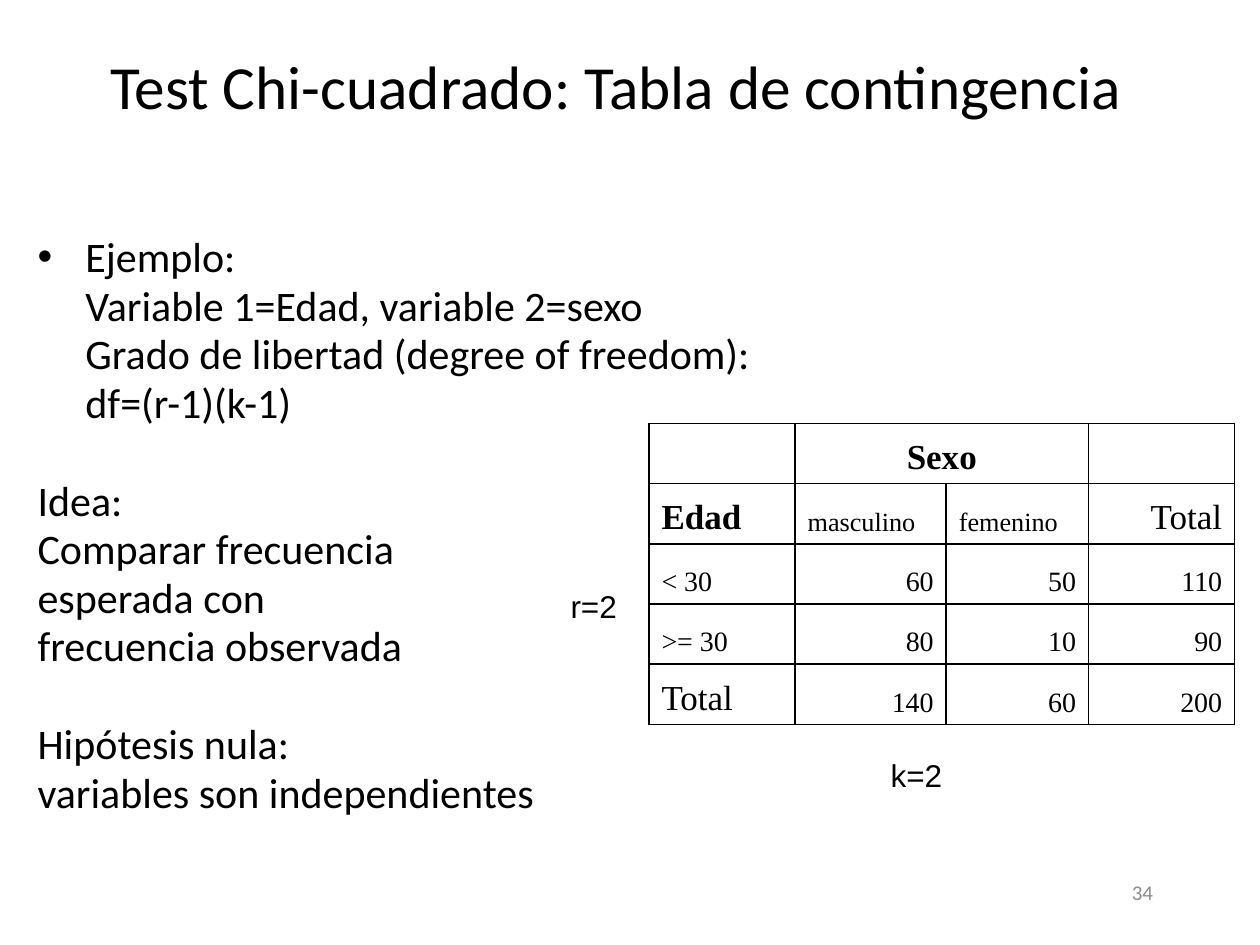
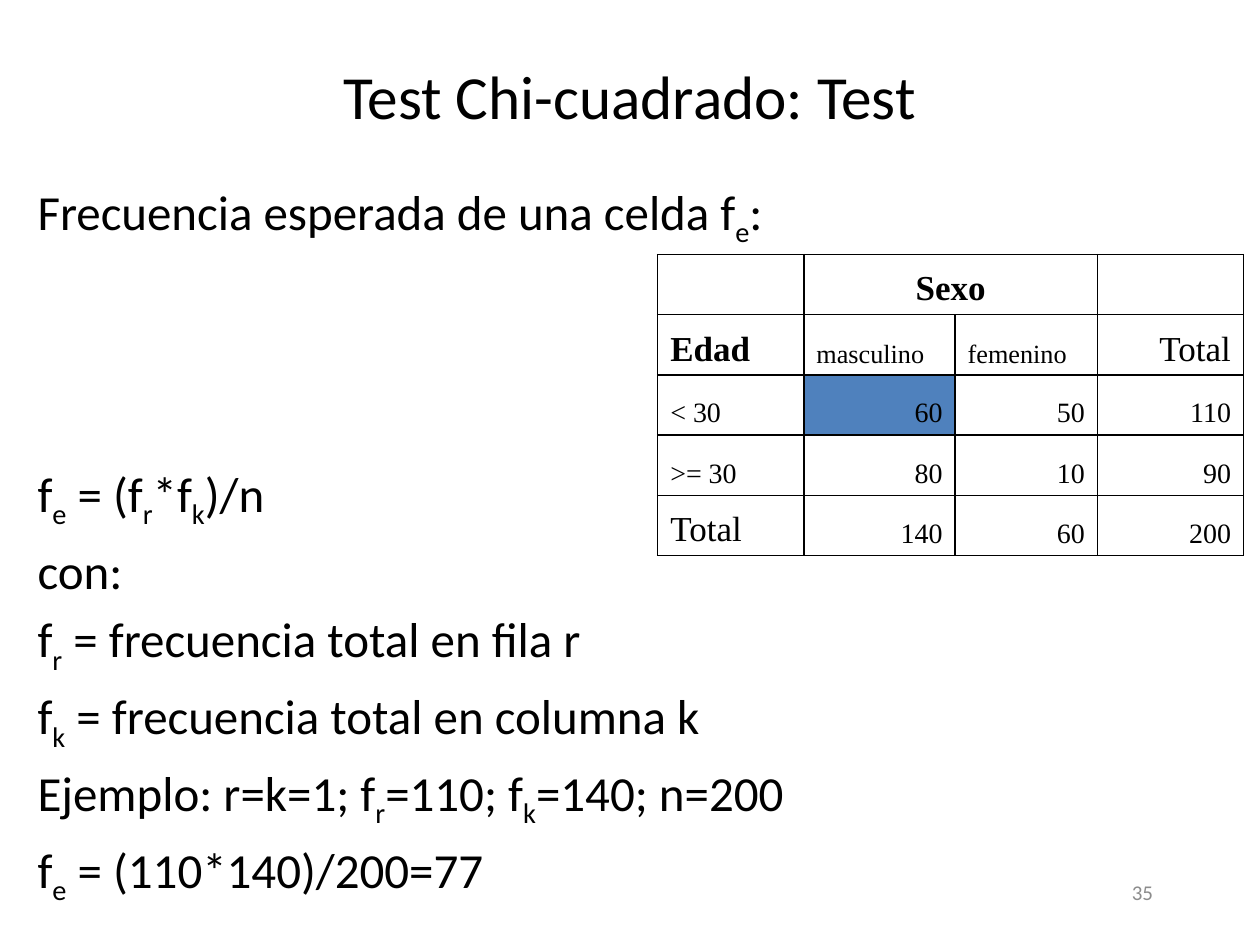
import dataclasses

import lxml.etree
import pptx
import pptx.dml.color
import pptx.enum.text
import pptx.oxml.ns
import pptx.util

Inches = pptx.util.Inches
Pt = pptx.util.Pt
Align = pptx.enum.text.PP_ALIGN
Anchor = pptx.enum.text.MSO_ANCHOR
qn = pptx.oxml.ns.qn


@dataclasses.dataclass(frozen=True)
class Theme:
    ink: str = "000000"
    grey: str = "8C8C8C"
    mark: str = "4F81BD"
    main: str = "Calibri"
    note: str = "Arial"
    grid: str = "Times New Roman"
    title: int = 35
    label: int = 18
    page: int = 12
    head: int = 20
    group: int = 15
    value: int = 16


THEME = Theme()
INDENT = 0.38
COLS = (1.16, 1.2, 1.13, 1.16)
HEIGHT = 2.39
CELLS = (
    ("", "Sexo", "", ""),
    ("Edad", "masculino", "femenino", "Total"),
    ("< 30", "60", "50", "110"),
    (">= 30", "80", "10", "90"),
    ("Total", "140", "60", "200"),
)


def rgb(code):
    return pptx.dml.color.RGBColor.from_string(code)


def apply(item, form):
    for name, value in form.items():
        setattr(item, name, value)


def add_run(para, text, size, face, color=THEME.ink, bold=False):
    run = para.add_run()
    run.text = text
    apply(run.font, {"size": Pt(size), "name": face, "bold": bold})
    run.font.color.rgb = rgb(color)
    return run


def add_rich(para, text, size):
    """Add text in which the letter after each underscore is a subscript."""
    first, *rest = text.split("_")
    add_run(para, first, size, THEME.main)
    for part in rest:
        sub = add_run(para, part[0], size, THEME.main)
        sub.font._element.set("baseline", "-25000")
        if part[1:]:
            add_run(para, part[1:], size, THEME.main)


def add_box(slide, left, top, width, height, **form):
    box = slide.shapes.add_textbox(*map(Inches, (left, top, width, height)))
    apply(box.text_frame, {"word_wrap": True, **form})
    return box.text_frame


def add_title(slide, text, left, top):
    frame = add_box(slide, left, top, 8.5, 1.25, vertical_anchor=Anchor.MIDDLE)
    para = frame.paragraphs[0]
    para.alignment = Align.CENTER
    add_run(para, text, THEME.title, THEME.main)


def add_page(slide, number):
    frame = add_box(slide, 7.17, 6.83, 2.08, 0.5, vertical_anchor=Anchor.MIDDLE)
    para = frame.paragraphs[0]
    para.alignment = Align.RIGHT
    add_run(para, str(number), THEME.page, THEME.main, THEME.grey)


def add_label(slide, text, left, top):
    frame = add_box(slide, left, top, 0.7, 0.4)
    add_run(frame.paragraphs[0], text, THEME.label, THEME.note)


def set_indent(para, bullet):
    props = para._p.get_or_add_pPr()
    props.set("marL", str(Inches(INDENT)))
    if bullet:
        props.set("indent", str(-Inches(INDENT)))
        lxml.etree.SubElement(props, qn("a:buFont")).set("typeface", "Arial")
        lxml.etree.SubElement(props, qn("a:buChar")).set("char", "•")


def add_body(slide, top, height, groups, size, space, gap, line=1.0, inset=False):
    """Add groups of lines, set apart by gap points; inset bullets the first."""
    frame = add_box(slide, 0.2, top, 7.97, height)
    for g, group in enumerate(groups):
        for i, text in enumerate(group):
            start = g == i == 0
            para = frame.paragraphs[0] if start else frame.add_paragraph()
            before = 0 if start else space if i else gap
            apply(para, {"line_spacing": line, "space_before": Pt(before)})
            if inset and g == 0:
                set_indent(para, bullet=start)
            add_rich(para, text, size)


def add_edges(cell):
    props = cell._tc.get_or_add_tcPr()
    for i, side in enumerate(("lnL", "lnR", "lnT", "lnB")):
        edge = lxml.etree.Element(qn("a:" + side), w=str(Pt(1)))
        fill = lxml.etree.SubElement(edge, qn("a:solidFill"))
        lxml.etree.SubElement(fill, qn("a:srgbClr")).set("val", THEME.ink)
        props.insert(i, edge)


def cell_style(text, row, col):
    """Return size, weight and alignment by the role of a cell."""
    if text in ("Sexo", "Edad"):
        return THEME.head, True, Align.CENTER if col else Align.LEFT
    if text == "Total":
        return THEME.head, False, Align.RIGHT if col else Align.LEFT
    if row == 1:
        return THEME.group, False, Align.LEFT
    return THEME.value, False, Align.RIGHT if col else Align.LEFT


def add_grid(slide, left, top, marked=None):
    area = map(Inches, (left, top, sum(COLS), HEIGHT))
    table = slide.shapes.add_table(len(CELLS), len(COLS), *area).table
    apply(table, {"first_row": False, "horz_banding": False})
    for col, width in zip(table.columns, COLS):
        col.width = Inches(width)
    for r, texts in enumerate(CELLS):
        table.rows[r].height = Inches(HEIGHT / len(CELLS))
        for c, text in enumerate(texts):
            cell = table.cell(r, c)
            cell.vertical_anchor = Anchor.BOTTOM
            if (r, c) == marked:
                cell.fill.solid()
                cell.fill.fore_color.rgb = rgb(THEME.mark)
            else:
                cell.fill.background()
            add_edges(cell)
            if text:
                size, bold, align = cell_style(text, r, c)
                para = cell.text_frame.paragraphs[0]
                para.alignment = align
                add_run(para, text, size, THEME.grid, bold=bold)
    table.cell(0, 1).merge(table.cell(0, 2))


def add_example(slide):
    add_page(slide, 34)
    add_title(slide, "Test Chi-cuadrado: Tabla de contingencia", 0.64, 0.05)
    groups = (
        ("Ejemplo:", "Variable 1=Edad, variable 2=sexo",
         "Grado de libertad (degree of freedom):", "df=(r-1)(k-1)"),
        ("Idea:", "Comparar frecuencia", "esperada con", "frecuencia observada"),
        ("Hipótesis nula:", "variables son independientes"),
    )
    add_body(slide, 1.86, 4.95, groups, size=24, space=4.7, gap=32.8,
             line=0.8, inset=True)
    add_label(slide, "r=2", 4.43, 4.61)
    add_label(slide, "k=2", 6.97, 5.95)
    add_grid(slide, 5.15, 3.36)


def add_test(slide):
    add_page(slide, 35)
    add_title(slide, "Test Chi-cuadrado: Test", 0.75, 0.13)
    groups = (
        ("Frecuencia esperada de una celda f_e:",),
        ("f_e = (f_r*f_k)/n", "con:", "f_r = frecuencia total en fila r",
         "f_k = frecuencia total en columna k",
         "Ejemplo: r=k=1; f_r=110; f_k=140; n=200",
         "f_e = (110*140)/200=77"),
    )
    add_body(slide, 1.39, 5.91, groups, size=28, space=5.7, gap=122.8)
    add_grid(slide, 5.22, 2.02, marked=(2, 1))


def main():
    deck = pptx.Presentation()
    apply(deck, {"slide_width": Inches(10), "slide_height": Inches(7.5)})
    for build in (add_example, add_test):
        build(deck.slides.add_slide(deck.slide_layouts[6]))
    deck.save("out.pptx")


if __name__ == "__main__":
    main()
